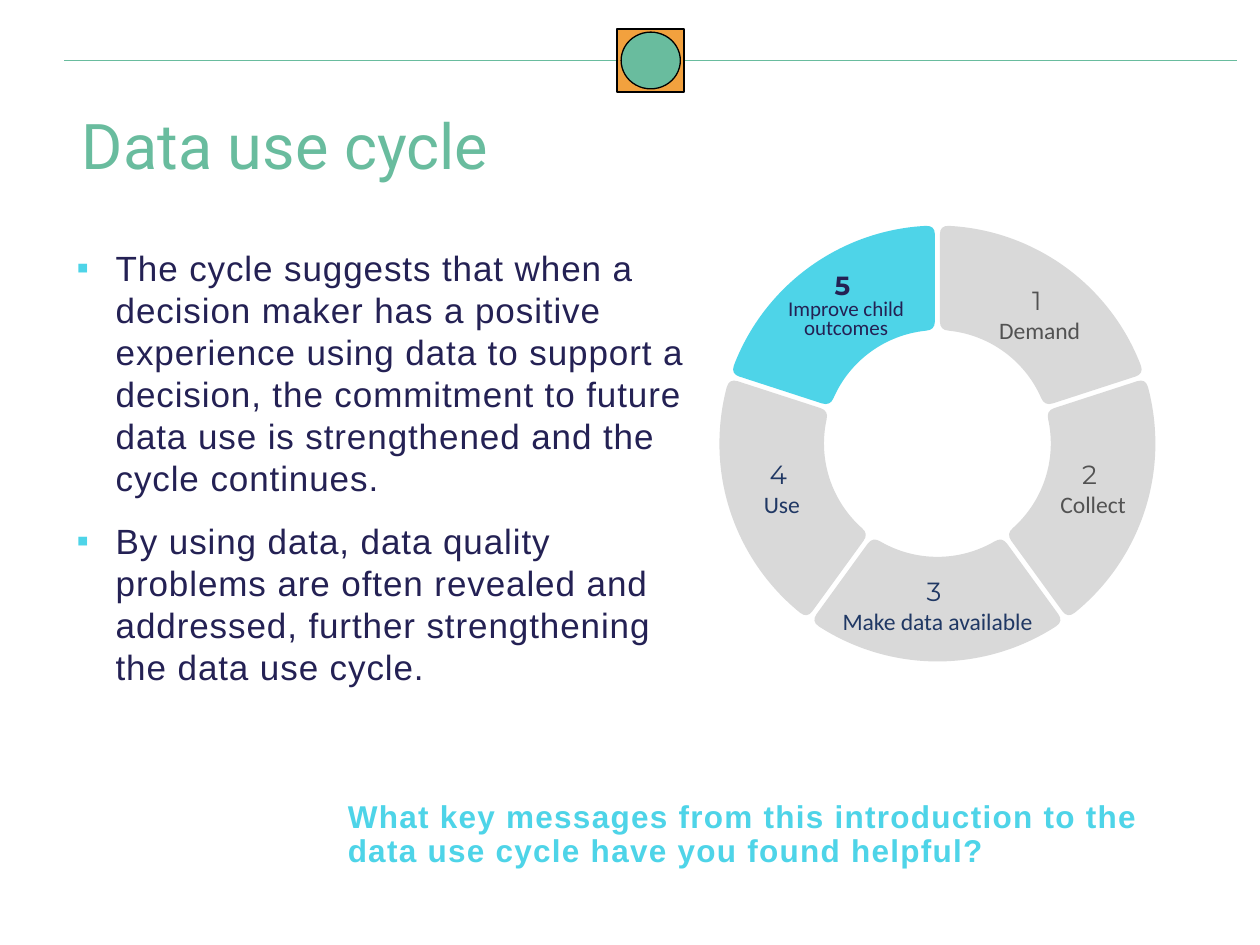
from math import asin, cos, pi, sin, tan

from lxml.etree import SubElement
from pptx import Presentation
from pptx.dml.color import RGBColor
from pptx.enum.shapes import MSO_CONNECTOR, MSO_SHAPE
from pptx.enum.text import MSO_ANCHOR, PP_ALIGN
from pptx.oxml.ns import qn
from pptx.util import Inches, Pt

GREEN, ORANGE, BLACK = "69BC9E", "F2A13E", "000000"
CYAN, GREY = "4ED4E8", "D9D9D9"
INDIGO, NAVY, CHARCOAL = "242154", "203864", "525252"

MESSAGES = [
    "The cycle suggests that when a decision maker has a positive experience using data "
    "to support a decision, the commitment to future data use is strengthened and the "
    "cycle continues.",
    "By using data, data quality problems are often revealed and addressed, further "
    "strengthening the data use cycle.",
]
QUESTION = ("What key messages from this introduction to the data use cycle "
            "have you found helpful?")
STAGES = [
    ("1", " Demand", CHARCOAL, (7.58, 2.21, 1.3, 0.58)),
    ("2 ", "Collect", CHARCOAL, (8.1, 3.59, 1.15, 0.58)),
    ("3 ", "Make data available", NAVY, (6.4, 4.52, 2.08, 0.58)),
    ("4 ", "Use", NAVY, (5.23, 3.59, 1.95, 0.58)),
    ("5 ", "Improve child outcomes", INDIGO, (6.02, 2.09, 1.39, 0.66)),
]
ACTIVE_STAGE = 5


def rgb(value):
    """Return the colour for a hex string."""
    return RGBColor.from_string(value)


def inches(box):
    """Return a box's numbers as lengths."""
    return [Inches(value) for value in box]


def add_text(paragraph, text, font="Arial", size=18, color=INDIGO, bold=False, spacing=0):
    """Add one formatted run to a paragraph."""
    run = paragraph.add_run()
    run.text = text
    run.font.name = font
    run.font.size = Pt(size)
    run.font.bold = bold
    run.font.color.rgb = rgb(color)
    if spacing:
        run.font._element.set("spc", str(round(spacing * 100)))


def add_text_frame(slide, box):
    """Add a wrapping text box and return its text frame."""
    text_frame = slide.shapes.add_textbox(*inches(box)).text_frame
    text_frame.word_wrap = True
    return text_frame


def set_bullet(paragraph, character, color, indent):
    """Give a paragraph a coloured hanging bullet."""
    properties = paragraph._p.get_or_add_pPr()
    properties.set("marL", str(Inches(indent)))
    properties.set("indent", str(-Inches(indent)))
    bullet_color = SubElement(properties, qn("a:buClr"))
    SubElement(bullet_color, qn("a:srgbClr")).set("val", color)
    SubElement(properties, qn("a:buFont")).set("typeface", "Arial")
    SubElement(properties, qn("a:buChar")).set("char", character)


def add_emblem_shape(slide, kind, box, fill, line_width):
    """Add one outlined shape of the header emblem."""
    shape = slide.shapes.add_shape(kind, *inches(box))
    shape.shadow.inherit = False
    shape.fill.solid()
    shape.fill.fore_color.rgb = rgb(fill)
    shape.line.color.rgb = rgb(BLACK)
    shape.line.width = Pt(line_width)


def add_header(slide, box):
    """Draw the rule with the emblem in the middle of the given box."""
    left, top, width, height = box
    middle = top + height / 2
    rule = slide.shapes.add_connector(
        MSO_CONNECTOR.STRAIGHT, *inches((left, middle, left + width, middle)))
    rule.line.color.rgb = rgb(GREEN)
    rule.line.width = Pt(0.75)
    SubElement(rule._element.spPr, qn("a:effectLst"))
    center = left + width / 2
    for kind, size, fill, line_width in (
        (MSO_SHAPE.RECTANGLE, (0.53, 0.5), ORANGE, 1),
        (MSO_SHAPE.OVAL, (0.47, 0.45), GREEN, 0.75),
    ):
        corner = (center - size[0] / 2, middle - size[1] / 2)
        add_emblem_shape(slide, kind, corner + size, fill, line_width)


def add_title(slide, box, text):
    """Place and format the title placeholder."""
    title = slide.shapes.title
    title.left, title.top, title.width, title.height = inches(box)
    title.text_frame.vertical_anchor = MSO_ANCHOR.TOP
    paragraph = title.text_frame.paragraphs[0]
    paragraph.alignment = PP_ALIGN.LEFT
    paragraph.line_spacing = 0.9
    add_text(paragraph, text, font="Roboto", size=36, color=GREEN)


def add_messages(slide, box, messages):
    """Add the bulleted messages."""
    text_frame = add_text_frame(slide, box)
    for index, message in enumerate(messages):
        paragraph = text_frame.add_paragraph() if index else text_frame.paragraphs[0]
        paragraph.space_after = Pt(12)
        set_bullet(paragraph, "▪", CYAN, 0.31)
        add_text(paragraph, message, size=20, spacing=0.5)


def segment_curves(center, inner, outer, start, end, half_gap=0.02, corner=0.07):
    """Return the first point and the curves of a ring segment with rounded corners."""
    def point(radius, angle):
        return center[0] + radius * sin(angle), center[1] - radius * cos(angle)

    def edge(radius, side, inset=0.0):
        angle = start if side > 0 else end
        return angle + side * (asin(half_gap / radius) + inset / radius)

    def arc(radius, first, last, pieces):
        step = (last - first) / pieces
        reach = 4 / 3 * tan(step / 4) * radius
        for piece in range(pieces):
            a, b = first + piece * step, first + (piece + 1) * step
            (x0, y0), (x1, y1) = point(radius, a), point(radius, b)
            yield ((x0 + reach * cos(a), y0 + reach * sin(a)),
                   (x1 - reach * cos(b), y1 - reach * sin(b)), (x1, y1))

    def turn(radius, side, depth, inward):
        tip = point(radius, edge(radius, side))
        ends = [point(radius, edge(radius, side, corner)),
                point(radius + depth, edge(radius + depth, side))]
        begin, finish = ends if inward else ends[::-1]
        controls = [tuple((a + 2 * b) / 3 for a, b in zip(side_end, tip))
                    for side_end in (begin, finish)]
        return begin, (*controls, finish)

    outer_end, inner_end = turn(outer, -1, -corner, True), turn(inner, -1, corner, False)
    inner_start, outer_start = turn(inner, 1, corner, True), turn(outer, 1, -corner, False)
    curves = [*arc(outer, edge(outer, 1, corner), edge(outer, -1, corner), 4),
              outer_end[1], (inner_end[0],), inner_end[1],
              *arc(inner, edge(inner, -1, corner), edge(inner, 1, corner), 1),
              inner_start[1], (outer_start[0],), outer_start[1]]
    return outer_start[1][-1], curves


def add_segment(slide, first, curves, fill):
    """Draw a filled outline, bending each side that has control points."""
    builder = slide.shapes.build_freeform(*inches(first))
    builder.add_line_segments([inches(curve[-1]) for curve in curves], close=True)
    segment = builder.convert_to_shape()
    segment.shadow.inherit = False
    segment.fill.solid()
    segment.fill.fore_color.rgb = rgb(fill)
    segment.line.fill.background()
    sides = list(segment._element.iter(qn("a:lnTo")))
    for side, curve in zip(sides, curves):
        if len(curve) == 3:
            outline = side.getparent()
            bend = SubElement(outline, qn("a:cubicBezTo"))
            outline.replace(side, bend)
            for x, y in curve:
                node = SubElement(bend, qn("a:pt"))
                node.set("x", str(Inches(x) - segment.left))
                node.set("y", str(Inches(y) - segment.top))


def add_stage_label(slide, box, number, caption, color, active):
    """Add a stage number with its caption below."""
    text_frame = add_text_frame(slide, box)
    heading, body = text_frame.paragraphs[0], text_frame.add_paragraph()
    add_text(heading, number, font="Montserrat", size=15, color=color, bold=active)
    add_text(body, caption, font="Calibri", size=12 if active else 13.5, color=color)
    if active:
        body.line_spacing = 0.75
    for paragraph in (heading, body):
        paragraph.alignment = PP_ALIGN.CENTER


def add_cycle(slide, box, stages):
    """Draw the ring of stages in a square box, then the labels."""
    left, top, size, _ = box
    center = (left + size / 2, top + size / 2)
    sweep = 2 * pi / len(stages)
    for index in range(len(stages)):
        first, curves = segment_curves(
            center, 0.9, size / 2, index * sweep, (index + 1) * sweep)
        add_segment(slide, first, curves, CYAN if index + 1 == ACTIVE_STAGE else GREY)
    for position, (number, caption, color, label_box) in enumerate(stages, 1):
        add_stage_label(slide, label_box, number, caption, color, position == ACTIVE_STAGE)


def add_question(slide, box, text):
    """Add the closing question."""
    text_frame = add_text_frame(slide, box)
    text_frame.margin_left = text_frame.margin_right = Inches(0.07)
    text_frame.margin_top = text_frame.margin_bottom = Inches(0.04)
    paragraph = text_frame.paragraphs[0]
    paragraph.line_spacing = 0.9
    add_text(paragraph, text, color=CYAN, bold=True, spacing=0.75)


def main():
    """Build the slide and save it."""
    presentation = Presentation()
    presentation.slide_width, presentation.slide_height = Inches(10), Inches(7.5)
    slide = presentation.slides.add_slide(presentation.slide_layouts[5])
    add_header(slide, (0.51, 0.23, 9.31, 0.5))
    add_title(slide, (0.55, 0.86, 7.47, 0.92), "Data use cycle")
    add_messages(slide, (0.51, 1.91, 5.04, 3.94), MESSAGES)
    add_cycle(slide, (5.71, 1.79, 3.46, 3.46), STAGES)
    add_question(slide, (2.69, 6.32, 6.49, 0.64), QUESTION)
    presentation.save("out.pptx")


if __name__ == "__main__":
    main()
